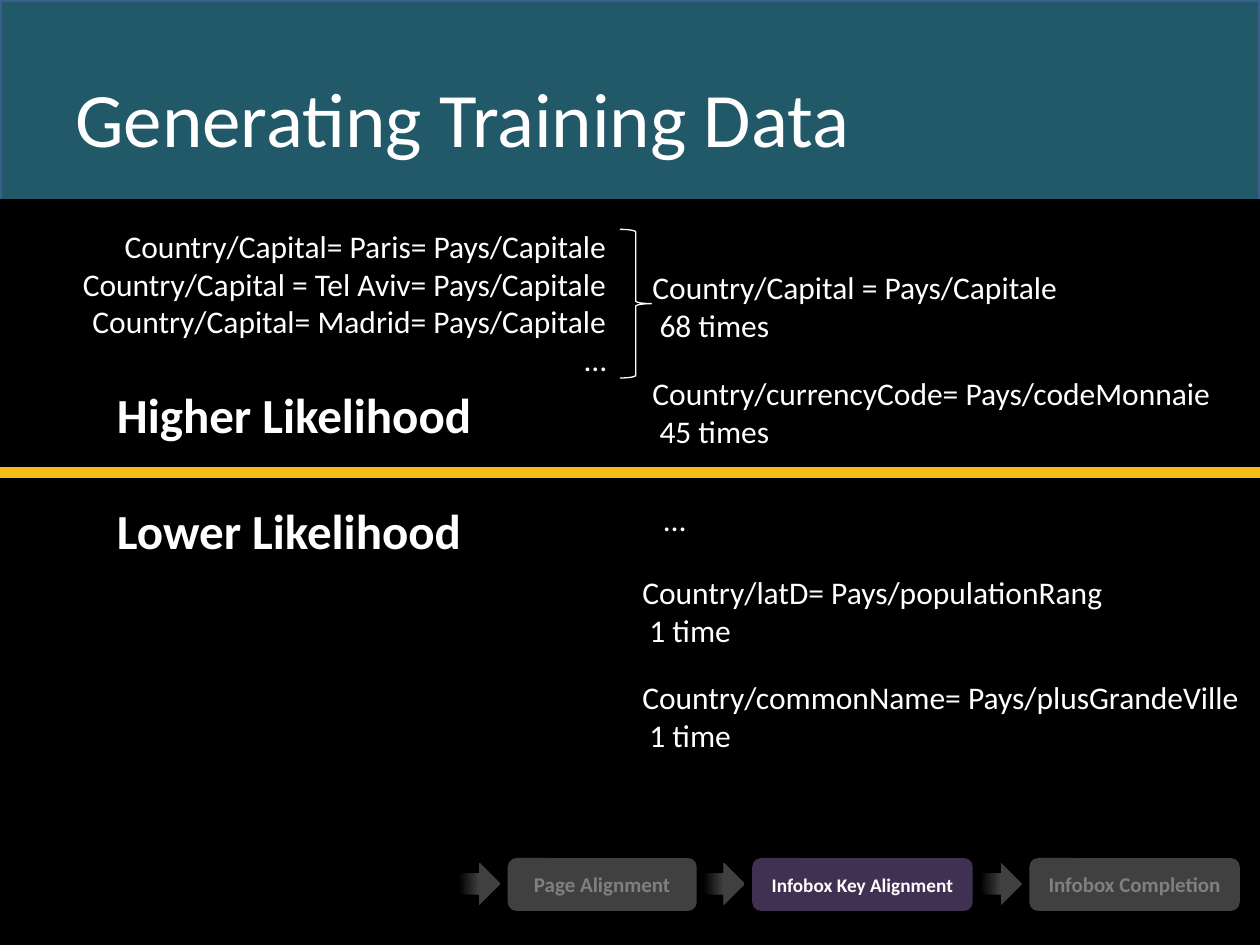
from pptx import Presentation
from pptx import util as u
from pptx.dml.color import RGBColor
from pptx.enum import shapes, text
from pptx.oxml.ns import qn
from lxml import etree

FONT = "Calibri"
WHITE = RGBColor(0xFF, 0xFF, 0xFF)
BLACK = RGBColor(0x00, 0x00, 0x00)
TEAL = RGBColor(0x21, 0x59, 0x68)
BLUE = RGBColor(0x3A, 0x5F, 0x8C)
DARK_GRAY = RGBColor(0x40, 0x40, 0x40)
MID_GRAY = RGBColor(0x80, 0x80, 0x80)
PURPLE = RGBColor(0x40, 0x31, 0x52)
GOLD = RGBColor(0xF7, 0xBC, 0x15)

EXAMPLES = [
    "Country/Capital= Paris= Pays/Capitale",
    "Country/Capital = Tel Aviv= Pays/Capitale",
    "Country/Capital= Madrid= Pays/Capitale",
    "…",
]
MATCHES = [
    (4.08, 2.08, 5.33, 0.71, ["Country/Capital = Pays/Capitale", " 68 times"]),
    (4.08, 2.92, 5.83, 0.71, ["Country/currencyCode= Pays/codeMonnaie", " 45 times"]),
    (4.17, 3.92, 5.83, 0.4, ["…"]),
    (4, 4.5, 5.83, 0.71, ["Country/latD= Pays/populationRang", " 1 time"]),
    (4, 5.33, 6, 0.71, ["Country/commonName= Pays/plusGrandeVille", " 1 time"]),
]
STEPS = [
    ("Page Alignment", 4.03, 1.5, 12, DARK_GRAY, MID_GRAY),
    ("Infobox Key Alignment", 5.97, 1.75, 11, PURPLE, WHITE),
    ("Infobox Completion", 8.17, 1.67, 12, DARK_GRAY, MID_GRAY),
]


def add_run(paragraph, words, size, color, bold=False):
    run = paragraph.add_run()
    run.text = words
    run.font.name = FONT
    run.font.size = u.Pt(size)
    run.font.bold = bold
    run.font.color.rgb = color


def add_shape(parent, kind, left, top, width, height, fill=None):
    shape = parent.add_shape(
        kind, u.Inches(left), u.Inches(top), u.Inches(width), u.Inches(height))
    shape.shadow.inherit = False
    shape.line.fill.background()
    if fill is None:
        shape.fill.background()
    else:
        shape.fill.solid()
        shape.fill.fore_color.rgb = fill
    return shape


def set_outline(shape, color, width):
    shape.line.color.rgb = color
    shape.line.width = u.Pt(width)


def add_text(slide, left, top, width, height, lines, size=18, bold=False,
             align=text.PP_ALIGN.LEFT, anchor=text.MSO_ANCHOR.TOP, indent=1):
    box = slide.shapes.add_textbox(
        u.Inches(left), u.Inches(top), u.Inches(width), u.Inches(height))
    frame = box.text_frame
    frame.word_wrap = True
    frame.vertical_anchor = anchor
    for index, line in enumerate(lines):
        paragraph = frame.paragraphs[0] if index == 0 else frame.add_paragraph()
        paragraph.alignment = align
        if indent:
            paragraph.level = 2
            properties = paragraph._p.get_or_add_pPr()
            properties.set("marL", str(u.Inches(indent)))
            properties.set("indent", "0")
        add_run(paragraph, line, size, WHITE, bold)


def add_divider(slide, top):
    line = slide.shapes.add_connector(
        shapes.MSO_CONNECTOR.STRAIGHT,
        u.Inches(-0.17), u.Inches(top), u.Inches(10), u.Inches(top))
    set_outline(line, GOLD, 6)
    etree.SubElement(line._element.spPr, qn("a:effectLst"))


def add_step(group, label, left, width, size, fill, color):
    arrow = add_shape(group, shapes.MSO_SHAPE.RIGHT_ARROW,
                      left - 0.39, 6.85, 0.33, 0.33)
    arrow.fill.gradient()
    arrow.fill.gradient_angle = 0
    for stop, (position, shade) in zip(arrow.fill.gradient_stops,
                                       [(0, BLACK), (0.5, DARK_GRAY)]):
        stop.position = position
        stop.color.rgb = shade
    step = add_shape(group, shapes.MSO_SHAPE.ROUNDED_RECTANGLE,
                     left, 6.81, width, 0.42, fill)
    frame = step.text_frame
    frame.word_wrap = False
    frame.vertical_anchor = text.MSO_ANCHOR.MIDDLE
    frame.paragraphs[0].alignment = text.PP_ALIGN.CENTER
    add_run(frame.paragraphs[0], label, size, color, bold=True)


def main():
    presentation = Presentation()
    presentation.slide_width = u.Inches(10)
    presentation.slide_height = u.Inches(7.5)
    slide = presentation.slides.add_slide(presentation.slide_layouts[6])

    rectangle = shapes.MSO_SHAPE.RECTANGLE
    backdrop = add_shape(slide.shapes, rectangle, 0, 0, 10, 7.5, TEAL)
    set_outline(backdrop, BLUE, 2)
    add_shape(slide.shapes, rectangle, 0, 1.58, 10, 5.92, BLACK)
    add_text(slide, 0.5, 0.3, 9, 1.25, ["Generating Training Data"], size=44,
             anchor=text.MSO_ANCHOR.MIDDLE, indent=0)

    pipeline = slide.shapes.add_group_shape()
    for step in STEPS:
        add_step(pipeline.shapes, *step)

    add_text(slide, -0.67, 1.75, 5.58, 1.31, EXAMPLES, align=text.PP_ALIGN.RIGHT)
    brace = add_shape(slide.shapes, shapes.MSO_SHAPE.RIGHT_BRACE,
                      4.92, 1.82, 0.25, 1.18)
    set_outline(brace, WHITE, 0.75)
    for match in MATCHES:
        add_text(slide, *match)

    add_divider(slide, 3.75)
    for top, label in [(3, "Higher Likelihood"), (3.92, "Lower Likelihood")]:
        add_text(slide, -0.17, top, 5.33, 0.57, [label], size=28, bold=True)

    presentation.save("out.pptx")


if __name__ == "__main__":
    main()
